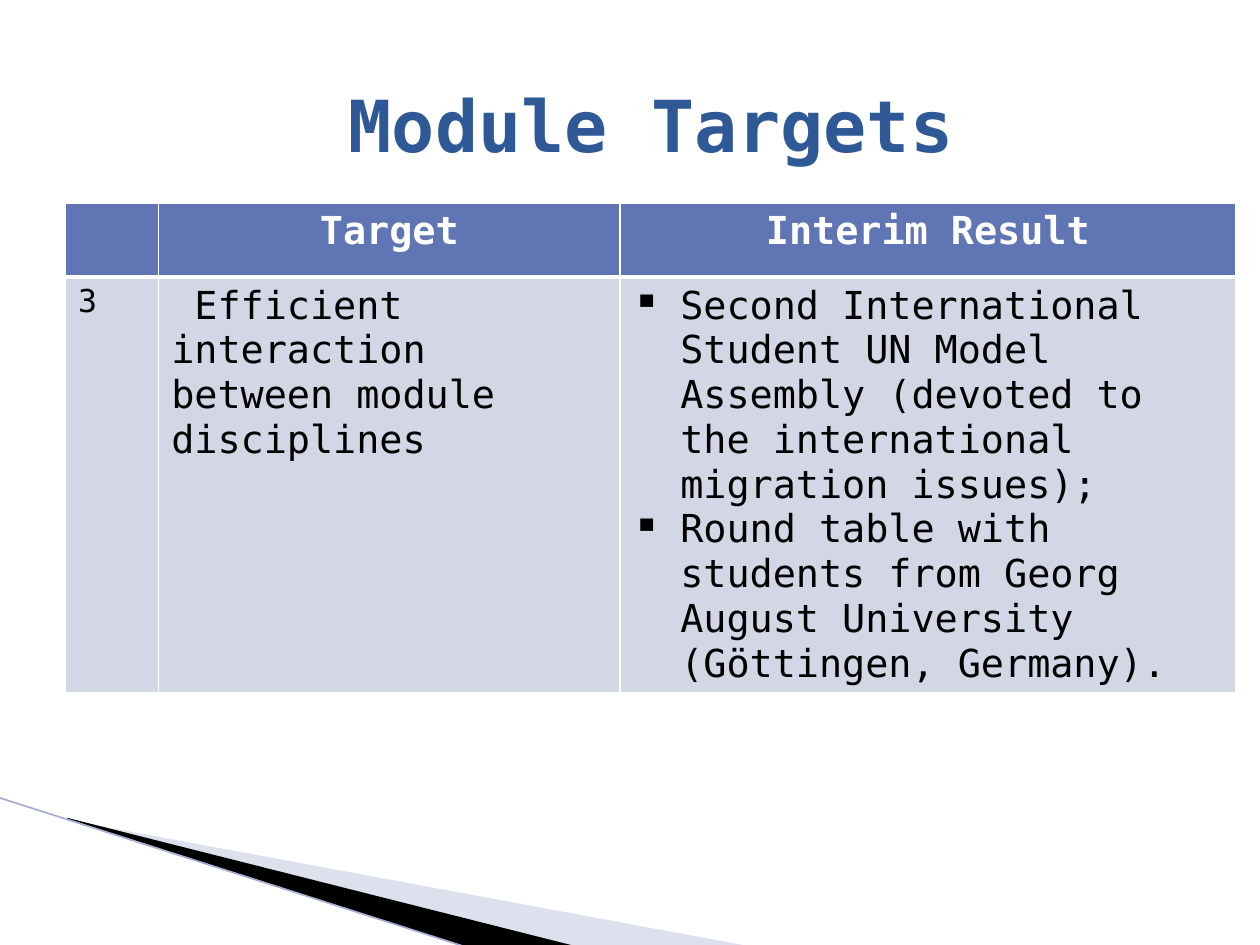
from lxml import etree
from pptx import Presentation
from pptx.dml.color import RGBColor
from pptx.enum.shapes import MSO_CONNECTOR
from pptx.enum.text import MSO_ANCHOR, PP_ALIGN
from pptx.oxml.ns import qn
from pptx.util import Inches, Pt

CENTER, LEFT = PP_ALIGN.CENTER, PP_ALIGN.LEFT
MIDDLE = MSO_ANCHOR.MIDDLE
STRAIGHT = MSO_CONNECTOR.STRAIGHT

# Content
TITLE = "Module Targets"
HEADERS = ["", "Target", "Interim Result"]
NUMBER = "3"
TARGET = " Efficient interaction between module disciplines"
RESULTS = [
    "Second International Student UN Model Assembly (devoted to the "
    "international migration issues);",
    "Round table with students from Georg August University "
    "(Göttingen, Germany).",
]
COLUMN_WIDTHS = [0.74, 3.66, 4.89]
ROW_HEIGHTS = [0.59, 2.87]
BULLET_INDENT = 0.38

# Corner decoration: outline, colour key, opacity in percent
WEDGES = [
    ([(0.55, 6.51), (5.95, 7.51), (4.56, 7.51), (0.55, 6.5)], "pale", 40),
    ([(0.53, 6.49), (4.57, 7.51), (3.72, 7.52), (0.54, 6.5)], "black", 100),
]
EDGE = [(-0.01, 6.33), (3.71, 7.52)]

THEME = {
    "font": "DejaVu Sans Mono",
    "title": "2F5897", "header": "6076B4", "body": "D2D6E5",
    "white": "FFFFFF", "black": "000000", "pale": "ACB4D5", "edge": "A4AED0",
    "title_size": 41, "text_size": 22, "number_size": 18,
}


def color(key):
    return RGBColor.from_string(THEME[key])


def write(paragraph, text, size, ink, bold=False, align=LEFT):
    paragraph.alignment = align
    run = paragraph.add_run()
    run.text = text
    run.font.name = THEME["font"]
    run.font.size = Pt(THEME[size])
    run.font.bold = bold
    run.font.color.rgb = color(ink)


def add_bullet(paragraph):
    properties = paragraph._p.get_or_add_pPr()
    properties.set("marL", str(Inches(BULLET_INDENT)))
    properties.set("indent", str(-Inches(BULLET_INDENT)))
    etree.SubElement(properties, qn("a:buChar"), char="▪")


def style_cell(cell, fill, **border_widths):
    cell.fill.solid()
    cell.fill.fore_color.rgb = color(fill)
    properties = cell._tc.get_or_add_tcPr()
    for position, side in enumerate("LRTB"):
        width = Pt(border_widths.get(side, 1))
        border = etree.Element(qn(f"a:ln{side}"), w=str(width))
        solid = etree.SubElement(border, qn("a:solidFill"))
        etree.SubElement(solid, qn("a:srgbClr"), val=THEME["white"])
        properties.insert(position, border)


def add_decoration(slide):
    for points, fill, opacity in WEDGES:
        corners = [(Inches(x), Inches(y)) for x, y in points]
        builder = slide.shapes.build_freeform(*corners[0])
        builder.add_line_segments(corners[1:], close=True)
        wedge = builder.convert_to_shape()
        wedge.shadow.inherit = False
        wedge.fill.solid()
        wedge.fill.fore_color.rgb = color(fill)
        wedge.line.fill.background()
        if opacity < 100:
            tint = wedge._element.spPr.find(".//" + qn("a:srgbClr"))
            etree.SubElement(tint, qn("a:alpha"), val=str(opacity * 1000))
    ends = [Inches(value) for point in EDGE for value in point]
    edge = slide.shapes.add_connector(STRAIGHT, *ends)
    edge.line.color.rgb = color("edge")
    edge.line.width = Pt(0.95)
    etree.SubElement(edge._element.spPr, qn("a:effectLst"))


def add_targets(slide):
    frame = slide.shapes.add_table(
        len(ROW_HEIGHTS), len(COLUMN_WIDTHS), Inches(0.52), Inches(1.61),
        Inches(sum(COLUMN_WIDTHS)), Inches(sum(ROW_HEIGHTS)))
    table = frame.table
    for column, width in zip(table.columns, COLUMN_WIDTHS):
        column.width = Inches(width)
    for row, height in zip(table.rows, ROW_HEIGHTS):
        row.height = Inches(height)

    # Header row
    for index, header in enumerate(HEADERS):
        cell = table.cell(0, index)
        style_cell(cell, "header", B=3)
        if header:
            write(cell.text_frame.paragraphs[0], header, "text_size", "white",
                  bold=True, align=CENTER)

    # Body row
    number, target, results = (table.cell(1, i) for i in range(len(HEADERS)))
    for cell in (number, target, results):
        style_cell(cell, "body", T=3)
    write(number.text_frame.paragraphs[0], NUMBER, "number_size", "black")
    write(target.text_frame.paragraphs[0], TARGET, "text_size", "black")
    for index, result in enumerate(RESULTS):
        text = results.text_frame
        paragraph = text.add_paragraph() if index else text.paragraphs[0]
        add_bullet(paragraph)
        write(paragraph, result, "text_size", "black")


def add_title(slide):
    title = slide.shapes.add_textbox(
        Inches(0.67), Inches(0.36), Inches(9), Inches(1.25)).text_frame
    title.word_wrap = True
    title.vertical_anchor = MIDDLE
    write(title.paragraphs[0], TITLE, "title_size", "title",
          bold=True, align=CENTER)


def main():
    deck = Presentation()
    deck.slide_width, deck.slide_height = Inches(10), Inches(7.5)
    slide = deck.slides.add_slide(deck.slide_layouts[6])
    add_decoration(slide)
    add_targets(slide)
    add_title(slide)
    deck.save("out.pptx")


if __name__ == "__main__":
    main()
